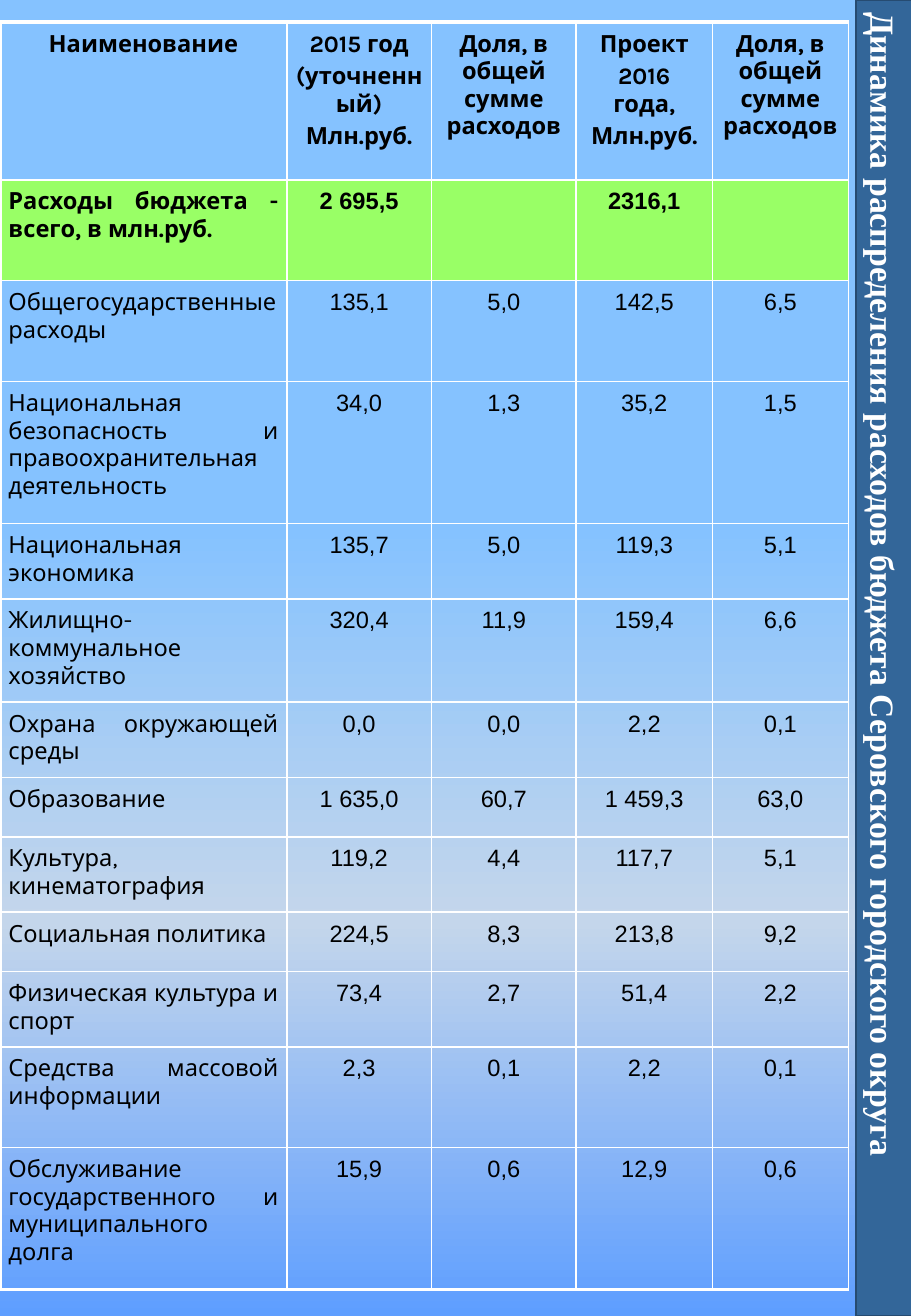
from lxml import etree
from pptx import Presentation, util as u
from pptx.dml import color
from pptx.enum import shapes, text
from pptx.oxml import ns

Pt = u.Pt
ALIGN = text.PP_ALIGN
COLS = [170, 85.8, 85.8, 80.7, 80.7]
SHARE = "Доля, в общей сумме расходов"
HEAD = ["Наименование", "2015 год\n(уточненный)\nМлн.руб.", SHARE,
        "Проект\n2016 года,\nМлн.руб.", SHARE]
# Row height, then the five cells
ROWS = [
    (93.6, *HEAD),
    (59.8, "Расходы бюджета - всего, в млн.руб.", "2 695,5", "", "2316,1", ""),
    (59.8, "Общегосударственные расходы", "135,1", "5,0", "142,5", "6,5"),
    (84.2, "Национальная безопасность и правоохранительная деятельность",
     "34,0", "1,3", "35,2", "1,5"),
    (44.6, "Национальная экономика", "135,7", "5,0", "119,3", "5,1"),
    (61.2, "Жилищно-коммунальное хозяйство", "320,4", "11,9", "159,4", "6,6"),
    (44.6, "Охрана окружающей среды", "0,0", "0,0", "2,2", "0,1"),
    (35.3, "Образование", "1 635,0", "60,7", "1 459,3", "63,0"),
    (44.6, "Культура, кинематография", "119,2", "4,4", "117,7", "5,1"),
    (35.3, "Социальная политика", "224,5", "8,3", "213,8", "9,2"),
    (44.6, "Физическая культура и спорт", "73,4", "2,7", "51,4", "2,2"),
    (59.8, "Средства массовой информации", "2,3", "0,1", "2,2", "0,1"),
    (84.2, "Обслуживание государственного и муниципального долга",
     "15,9", "0,6", "12,9", "0,6"),
]


def rgb(code):
    return color.RGBColor.from_string(code)


def add_node(parent, tag, **attrs):
    return etree.SubElement(parent, ns.qn(tag), attrs)


def set_font(para, name, size, code, bold):
    font = para.font
    font.name, font.size, font.bold = name, Pt(size), bold
    font.color.rgb = rgb(code)


def set_back(slide):
    fill = slide.background.fill
    fill.gradient()
    fill.gradient_angle = 270
    stops = slide.background._cSld.find(".//" + ns.qn("a:gsLst"))
    for stop in list(stops):
        stops.remove(stop)
    for pos, code in [(0, "85C2FF"), (40, "85C2FF"), (70, "C4D6EB"), (100, "5E9EFF")]:
        stop = add_node(stops, "a:gs", pos=str(pos * 1000))
        add_node(stop, "a:srgbClr", val=code)


def set_edges(cell, widths):
    """Draw white borders; widths are left, right, top, bottom."""
    props = cell._tc.get_or_add_tcPr()
    for side, width in zip("LRTB", widths):
        line = add_node(props, "a:ln" + side, w=str(Pt(width)))
        add_node(add_node(line, "a:solidFill"), "a:srgbClr", val="FFFFFF")


def fill_cell(cell, words, row, col):
    set_edges(cell, [2.25 if col == 0 else 1, 1, 2.25 if row == 0 else 1,
                     2.25 if row == len(ROWS) - 1 else 1])
    if row == 1:
        cell.fill.solid()
        cell.fill.fore_color.rgb = rgb("99FF66")
    else:
        cell.fill.background()
    cell.margin_left = cell.margin_right = Pt(5)
    cell.margin_top = cell.margin_bottom = Pt(5)
    cell.text = words
    for num, para in enumerate(cell.text_frame.paragraphs):
        para.alignment = ALIGN.JUSTIFY if row and not col else ALIGN.CENTER
        if num:
            para.space_before = Pt(3)
        set_font(para, "Arial" if row and col else "Karla", 14, "000000", row < 2)


def add_grid(slide):
    high = sum(row[0] for row in ROWS)
    table = slide.shapes.add_table(len(ROWS), len(COLS), 0, Pt(13),
                                   Pt(sum(COLS)), Pt(high)).table
    table.first_row = table.horz_banding = False
    for col, width in enumerate(COLS):
        table.columns[col].width = Pt(width)
    for row, (height, *cells) in enumerate(ROWS):
        table.rows[row].height = Pt(height)
        for col, words in enumerate(cells):
            fill_cell(table.cell(row, col), words, row, col)


def add_title(slide, words):
    """Add the title bar, turned to run down the right edge."""
    bar = slide.shapes.add_shape(shapes.MSO_SHAPE.RECTANGLE, Pt(133.9), Pt(373.7),
                                 Pt(780), Pt(33))
    bar.rotation = 90
    bar.shadow.inherit = False
    bar.fill.solid()
    bar.fill.fore_color.rgb = rgb("336699")
    bar.line.color.rgb = rgb("264B71")
    bar.line.width = Pt(1)
    frame = bar.text_frame
    frame.vertical_anchor = text.MSO_ANCHOR.MIDDLE
    frame.text = words
    para = frame.paragraphs[0]
    para.alignment = ALIGN.LEFT
    set_font(para, "Times New Roman", 20, "FFFFFF", True)


def main():
    deck = Presentation()
    deck.slide_width, deck.slide_height = Pt(540), Pt(780)
    slide = deck.slides.add_slide(deck.slide_layouts[6])
    set_back(slide)
    add_grid(slide)
    add_title(slide, "Динамика распределения расходов бюджета "
                     "Серовского городского округа")
    deck.save("out.pptx")


if __name__ == "__main__":
    main()
